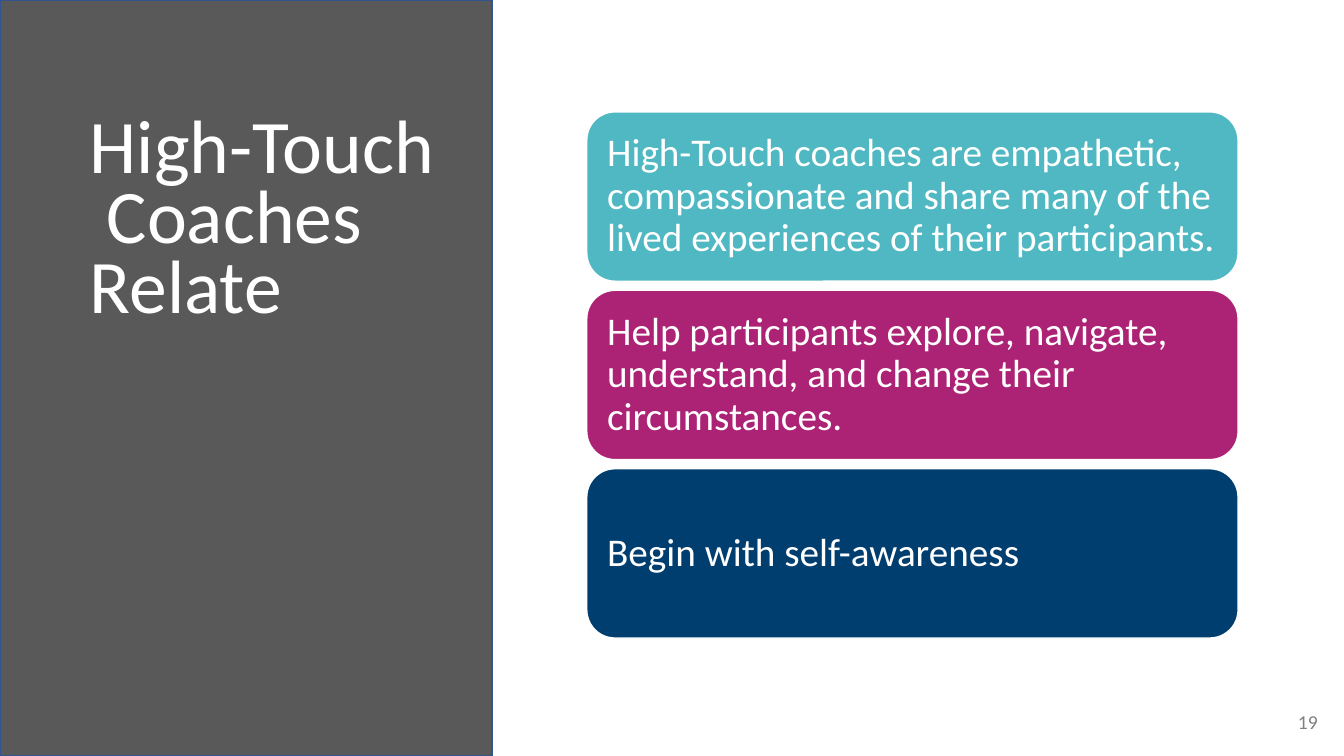
from pptx import Presentation
from pptx.dml.color import RGBColor
from pptx.enum.shapes import MSO_SHAPE
from pptx.enum.text import MSO_ANCHOR, MSO_AUTO_SIZE, PP_ALIGN
from pptx.util import Emu, Pt

FONT = "Calibri"
INK = {"white": "FFFFFF", "panel": "595959", "edge": "325491", "teal": "50B8C2",
       "plum": "AC2376", "navy": "003E6F", "gray": "808080"}
CARDS = [
    ("teal", "High-Touch coaches are empathetic, compassionate and share many "
             "of the lived experiences of their participants."),
    ("plum", "Help participants explore, navigate, understand, and change "
             "their circumstances."),
    ("navy", "Begin with self-awareness"),
]


def px(n):
    """Turn px (100 to the inch) into EMU."""
    return Emu(n * 9144)


def color(name):
    return RGBColor.from_string(INK[name])


def block(slide, kind, box, fill, edge):
    shape = slide.shapes.add_shape(kind, *map(px, box))
    shape.shadow.inherit = False
    shape.fill.solid()
    shape.fill.fore_color.rgb = color(fill)
    shape.line.color.rgb = color(edge)
    shape.line.width = Pt(1)
    return shape


def write(shape, text, size, ink, pad, anchor, align=PP_ALIGN.LEFT, lead=1.0):
    frame = shape.text_frame
    frame.word_wrap = True
    frame.auto_size = MSO_AUTO_SIZE.NONE
    frame.vertical_anchor = anchor
    frame.margin_left = frame.margin_right = px(pad[0])
    frame.margin_top = frame.margin_bottom = px(pad[1])
    para = frame.paragraphs[0]
    para.alignment = align
    para.line_spacing = lead
    run = para.add_run()
    run.text = text
    run.font.name = FONT
    run.font.size = Pt(size)
    run.font.color.rgb = color(ink)


def cards(slide, box):
    """Stack the rounded cards at equal gaps."""
    left, top, wide, high = box
    tall = 168
    step = (high - tall) // (len(CARDS) - 1)
    for i, (fill, text) in enumerate(CARDS):
        spot = (left, top + i * step, wide, tall)
        card = block(slide, MSO_SHAPE.ROUNDED_RECTANGLE, spot, fill, "white")
        # The round corners add 8 px to each inset
        write(card, text, 28, "white", (12, 12), MSO_ANCHOR.MIDDLE, lead=0.9)


def number(slide, box):
    """Page number at the lower right."""
    note = slide.shapes.add_textbox(*map(px, box))
    write(note, "19", 14, "gray", (10, 5), MSO_ANCHOR.MIDDLE, PP_ALIGN.RIGHT)


def panel(slide, box):
    """Dark side panel with the title in front of it."""
    left, top, wide, high = box
    back = block(slide, MSO_SHAPE.RECTANGLE, box, "panel", "edge")
    title = slide.shapes.title
    title.left, title.top = px(left + 79), px(top + 113)
    title.width, title.height = px(wide - 114), px(high - 226)
    # A no-break space leads the second line
    write(title, "High-Touch  Coaches Relate", 54, "white", (10, 5),
          MSO_ANCHOR.TOP, lead=Pt(50))
    back._element.addnext(title._element)


def main():
    deck = Presentation()
    deck.slide_width, deck.slide_height = px(1333), px(750)
    slide = deck.slides.add_slide(deck.slide_layouts[5])
    cards(slide, (582, 111, 646, 523))
    number(slide, (1017, 696, 300, 40))
    panel(slide, (0, 0, 488, 750))
    deck.save("out.pptx")


if __name__ == "__main__":
    main()
